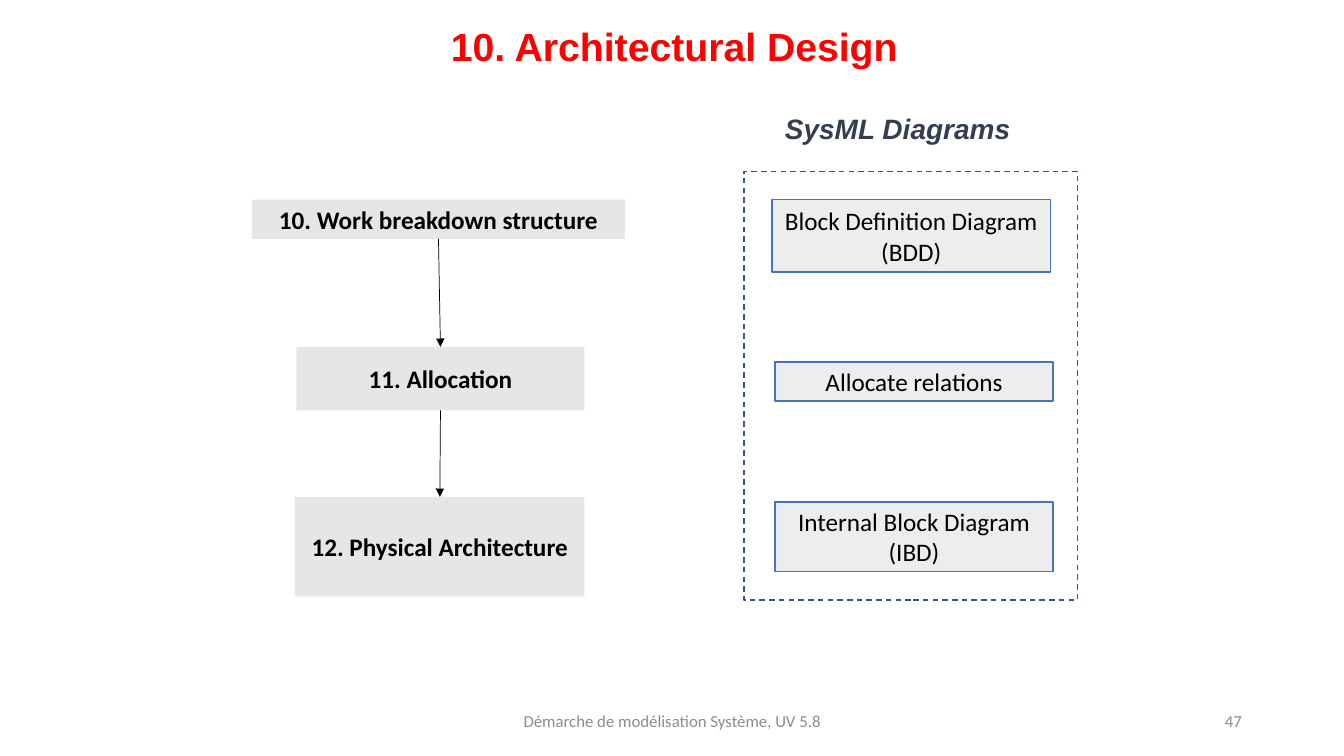
"""Build the architectural design slide."""
from itertools import pairwise

from pptx import Presentation
from pptx.dml.color import RGBColor
from pptx.enum.dml import MSO_LINE
from pptx.enum.shapes import MSO_CONNECTOR, MSO_SHAPE
from pptx.enum.text import MSO_ANCHOR as Anchor, MSO_AUTO_SIZE, PP_ALIGN as Align
from pptx.oxml.ns import qn
from pptx.util import Cm, Pt
from lxml.etree import SubElement


def color(value):
    """Turn a hex string into a colour."""
    return RGBColor.from_string(value)


class SlideBuilder:
    """Hold the style and the slide being drawn."""

    body_font, heading_font = "Calibri", "Arial"
    black, red, navy, muted = "000000", "FF0000", "333F50", "8C8C8C"
    step_fill, diagram_fill = "E7E6E6", "EDEDED"
    diagram_line, frame_line = "4472C4", "325491"

    def __init__(self, presentation):
        """Add a title-only slide."""
        self.slide = presentation.slides.add_slide(presentation.slide_layouts[5])

    def set_text(self, shape, text, size, ink, align=Align.CENTER, anchor=Anchor.MIDDLE,
                 font=None, bold=False, italic=False):
        """Put one formatted paragraph into a shape."""
        frame = shape.text_frame
        frame.text = text
        frame.word_wrap = True
        frame.auto_size = MSO_AUTO_SIZE.NONE
        frame.vertical_anchor = anchor
        paragraph = frame.paragraphs[0]
        paragraph.alignment = align
        style = paragraph.runs[0].font
        style.name = font or self.body_font
        style.size = Pt(size)
        style.bold, style.italic = bold, italic
        style.color.rgb = color(ink)
        return paragraph

    def title(self, text, left, top, width, height):
        """Move and fill the title placeholder."""
        shape = self.slide.shapes.title
        shape.left, shape.top = Cm(left), Cm(top)
        shape.width, shape.height = Cm(width), Cm(height)
        paragraph = self.set_text(shape, text, 28, self.red, font=self.heading_font, bold=True)
        paragraph.line_spacing = 1.5

    def label(self, text, left, top, width, height, size, ink, **style):
        """Add a text box."""
        shape = self.slide.shapes.add_textbox(Cm(left), Cm(top), Cm(width), Cm(height))
        self.set_text(shape, text, size, ink, **style)

    def box(self, left, top, width, height, fill=None, line=None, dash=None):
        """Add a flat rectangle."""
        shape = self.slide.shapes.add_shape(
            MSO_SHAPE.RECTANGLE, Cm(left), Cm(top), Cm(width), Cm(height))
        shape.shadow.inherit = False
        if fill:
            shape.fill.solid()
            shape.fill.fore_color.rgb = color(fill)
        else:
            shape.fill.background()
        if line:
            shape.line.color.rgb = color(line)
            shape.line.width = Pt(1)
            shape.line.dash_style = dash
        else:
            shape.line.fill.background()
        return shape

    def step(self, text, *place):
        """Add a process step."""
        shape = self.box(*place, fill=self.step_fill)
        self.set_text(shape, text, 18, self.black, bold=True)
        return shape

    def diagram(self, text, *place):
        """Add a diagram box."""
        shape = self.box(*place, fill=self.diagram_fill, line=self.diagram_line)
        self.set_text(shape, text, 18, self.black)

    def arrow(self, upper, lower):
        """Join the bottom of one step to the top of the next."""
        connector = self.slide.shapes.add_connector(MSO_CONNECTOR.STRAIGHT, 0, 0, 0, 0)
        connector.begin_connect(upper, 2)
        connector.end_connect(lower, 0)
        connector.line.color.rgb = color(self.black)
        connector.line.width = Pt(0.5)
        properties = connector.element.spPr
        SubElement(properties.find(qn("a:ln")), qn("a:tailEnd"), type="triangle")
        SubElement(properties, qn("a:effectLst"))


def main():
    """Draw the slide and save it."""
    presentation = Presentation()
    presentation.slide_width, presentation.slide_height = Cm(33.87), Cm(19.05)
    builder = SlideBuilder(presentation)

    builder.title("10. Architectural Design", 4.72, 0.08, 24.54, 1.55)
    builder.label("SysML Diagrams", 19.53, 2.69, 7.26, 1.12, 20, builder.navy,
                  align=Align.LEFT, anchor=Anchor.TOP, font=builder.heading_font,
                  bold=True, italic=True)

    builder.box(18.75, 4.32, 8.41, 10.8, line=builder.frame_line, dash=MSO_LINE.DASH)
    for text, left, top, height in (
        ("Block Definition Diagram (BDD)", 19.46, 5.03, 1.83),
        ("Allocate relations", 19.53, 9.12, 0.99),
        ("Internal Block Diagram (IBD)", 19.53, 12.65, 1.75),
    ):
        builder.diagram(text, left, top, 7.01, height)

    steps = [builder.step(*step) for step in (
        ("10. Work breakdown structure", 6.35, 5.03, 9.4, 0.99),
        ("11. Allocation", 7.47, 8.74, 7.26, 1.6),
        ("12. Physical Architecture", 7.44, 12.52, 7.29, 2.51),
    )]
    for upper, lower in pairwise(steps):
        builder.arrow(upper, lower)

    builder.label("Démarche de modélisation Système, UV 5.8",
                  11.23, 17.65, 11.43, 1.02, 12, builder.muted)
    builder.label("47", 23.93, 17.65, 7.62, 1.02, 12, builder.muted, align=Align.RIGHT)
    presentation.save("out.pptx")


if __name__ == "__main__":
    main()
